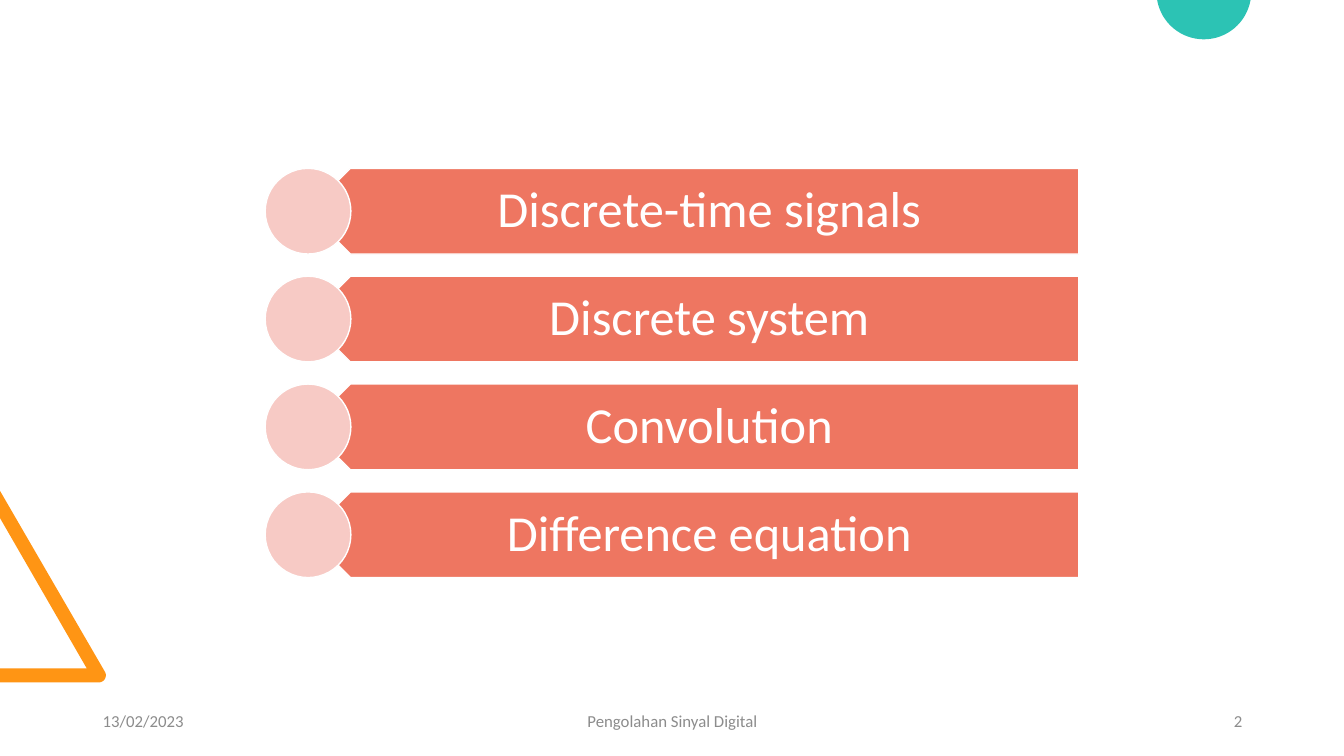
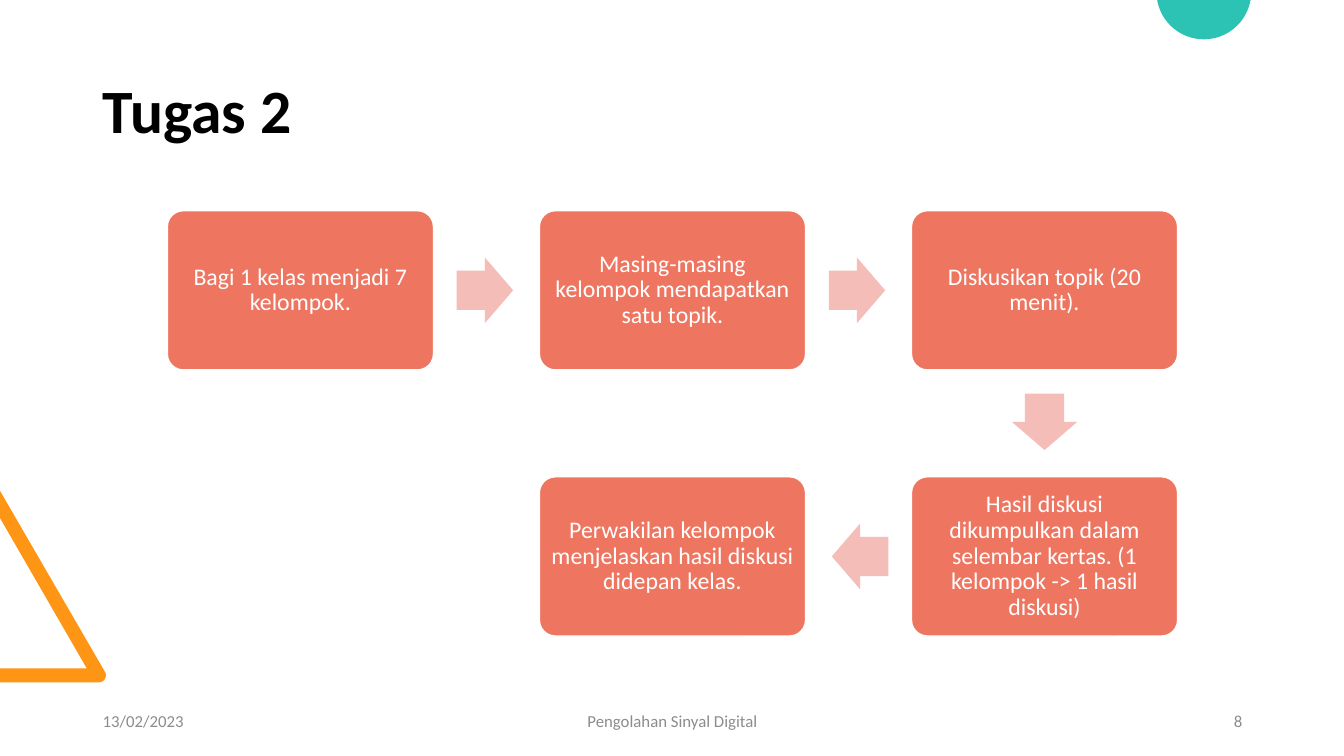
from dataclasses import dataclass
from math import atan2, cos, degrees, radians, sin

from pptx import Presentation
from pptx.dml.color import RGBColor
from pptx.enum.shapes import MSO_SHAPE
from pptx.enum.text import MSO_ANCHOR, MSO_AUTO_SIZE, PP_ALIGN
from pptx.util import Inches, Pt

PLATE, OVAL = MSO_SHAPE.PENTAGON, MSO_SHAPE.OVAL
CARD, ARROW = MSO_SHAPE.ROUNDED_RECTANGLE, MSO_SHAPE.RIGHT_ARROW
MIDDLE, NO_FIT = MSO_ANCHOR.MIDDLE, MSO_AUTO_SIZE.NONE
LEFT, CENTER, RIGHT = PP_ALIGN.LEFT, PP_ALIGN.CENTER, PP_ALIGN.RIGHT
TITLE_ONLY, BLANK = 5, 6


@dataclass(frozen=True)
class Theme:
    font: str = "Calibri"
    coral: str = "EE7661"
    blush: str = "F7CAC5"
    rose: str = "F5BDB7"
    orange: str = "FF9514"
    teal: str = "2CC3B4"
    white: str = "FFFFFF"
    black: str = "000000"
    gray: str = "8C8C8C"
    title: int = 44
    topic: int = 36
    step: int = 17
    foot: int = 12


THEME = Theme()
TOPICS = ["Discrete-time signals", "Discrete system", "Convolution",
          "Difference equation"]
# Column, row and wording of each step, in order of flow
STEPS = [
    (0, 0, "Bagi 1 kelas menjadi 7 kelompok."),
    (1, 0, "Masing-masing kelompok mendapatkan satu topik."),
    (2, 0, "Diskusikan topik (20 menit)."),
    (2, 1, "Hasil diskusi dikumpulkan dalam selembar kertas. "
           "(1 kelompok -> 1 hasil diskusi)"),
    (1, 1, "Perwakilan kelompok menjelaskan hasil diskusi didepan kelas."),
]


def box(left, top, width, height):
    return [Inches(v) for v in (left, top, width, height)]


def paint(shape, fill, line=None):
    shape.shadow.inherit = False
    shape.fill.solid()
    shape.fill.fore_color.rgb = RGBColor.from_string(fill)
    if line:
        shape.line.color.rgb = RGBColor.from_string(line)
        shape.line.width = Pt(1)
    else:
        shape.line.fill.background()


def write(shape, text, size, color, align=CENTER, bold=False, space=None,
          inset=(0.1, 0.05, 0.1, 0.05)):
    """Set one styled paragraph; inset is left, top, right, bottom."""
    frame = shape.text_frame
    frame.word_wrap = True
    frame.auto_size = NO_FIT
    frame.vertical_anchor = MIDDLE
    (frame.margin_left, frame.margin_top,
     frame.margin_right, frame.margin_bottom) = box(*inset)
    para = frame.paragraphs[0]
    para.alignment = align
    para.line_spacing = space
    run = para.add_run()
    run.text = text
    run.font.name = THEME.font
    run.font.size = Pt(size)
    run.font.bold = bold
    run.font.color.rgb = RGBColor.from_string(color)


def add_shape(slide, kind, area, fill, line=None):
    shape = slide.shapes.add_shape(kind, *box(*area))
    paint(shape, fill, line)
    return shape


def add_label(slide, area, *args, **style):
    write(slide.shapes.add_textbox(*box(*area)), *args, **style)


def arc(x, y, radius, start, end, count=32):
    """Points along an arc, with angles in degrees clockwise from the right."""
    turns = [radians(start + (end - start) * i / count)
             for i in range(count + 1)]
    return [(x + radius * cos(t), y + radius * sin(t)) for t in turns]


def add_outline(slide, points, fill):
    first, *rest = [(Inches(x), Inches(y)) for x, y in points]
    pen = slide.shapes.build_freeform(*first)
    pen.add_line_segments(rest, close=True)
    paint(pen.convert_to_shape(), fill)


def add_slide(deck, layout, number):
    """Add a slide with the shared corner shapes and footer."""
    slide = deck.slides.add_slide(deck.slide_layouts[layout])
    wedge = [(0, 6.77), (0, 6.63), (0.86, 6.63), (0, 5.14), (0, 4.87)]
    add_outline(slide, wedge + arc(0.98, 6.7, 0.07, -30, 90), THEME.orange)
    add_outline(slide, arc(11.94, -0.08, 0.47, 9.8, 170.2), THEME.teal)
    for left, width, text, align in (
            (0.92, 3, "13/02/2023", LEFT),
            (4.42, 4.5, "Pengolahan Sinyal Digital", CENTER),
            (9.42, 3, str(number), RIGHT)):
        add_label(slide, (left, 6.95, width, 0.4), text, THEME.foot,
                  THEME.gray, align)
    return slide


def add_title(slide, text):
    title = slide.shapes.title
    title.left, title.top, title.width, title.height = box(
        0.92, 0.4, 11.5, 1.45)
    write(title, text, THEME.title, THEME.black, LEFT, bold=True, space=0.9)


def add_topic(slide, top, text):
    size = 0.85
    plate = add_shape(slide, PLATE, (3.05, top, 7.65, size), THEME.coral,
                      THEME.white)
    plate.rotation = 180
    add_label(slide, (3.27, top, 7.44, size), text, THEME.topic, THEME.white,
              space=0.9, inset=(0.37, 0.15, 0.28, 0.15))
    add_shape(slide, OVAL, (2.63, top, size, size), THEME.blush, THEME.white)


def add_step(slide, x, y, text):
    """Add a card centred on x, y."""
    wide, high = 2.64, 1.58
    card = add_shape(slide, CARD, (x - wide / 2, y - high / 2, wide, high),
                     THEME.coral, THEME.white)
    card.adjustments[0] = 0.1
    write(card, text, THEME.step, THEME.white, space=0.9, inset=(0.06,) * 4)


def add_arrow(slide, start, end):
    """Add a block arrow between two card centres, a touch nearer the start."""
    wide, high, shift = 0.56, 0.65, 0.015
    angle = atan2(end[1] - start[1], end[0] - start[0])
    x = (start[0] + end[0]) / 2 - shift * cos(angle)
    y = (start[1] + end[1]) / 2 - shift * sin(angle)
    arrow = add_shape(slide, ARROW, (x - wide / 2, y - high / 2, wide, high),
                      THEME.rose)
    arrow.adjustments[0] = 0.6
    arrow.adjustments[1] = 0.5
    arrow.rotation = degrees(angle)


def topic_slide(deck):
    slide = add_slide(deck, BLANK, 2)
    for row, text in enumerate(TOPICS):
        add_topic(slide, 1.67 + 1.07 * row, text)


def task_slide(deck):
    slide = add_slide(deck, TITLE_ONLY, 8)
    add_title(slide, "Tugas 2")
    spots = [(2.98 + 3.69 * col, 2.88 + 2.64 * row) for col, row, _ in STEPS]
    for (x, y), (_, _, text) in zip(spots, STEPS):
        add_step(slide, x, y, text)
    for start, end in zip(spots, spots[1:]):
        add_arrow(slide, start, end)


def main():
    deck = Presentation()
    deck.slide_width, deck.slide_height = Inches(13.33), Inches(7.5)
    topic_slide(deck)
    task_slide(deck)
    deck.save("out.pptx")


if __name__ == "__main__":
    main()
